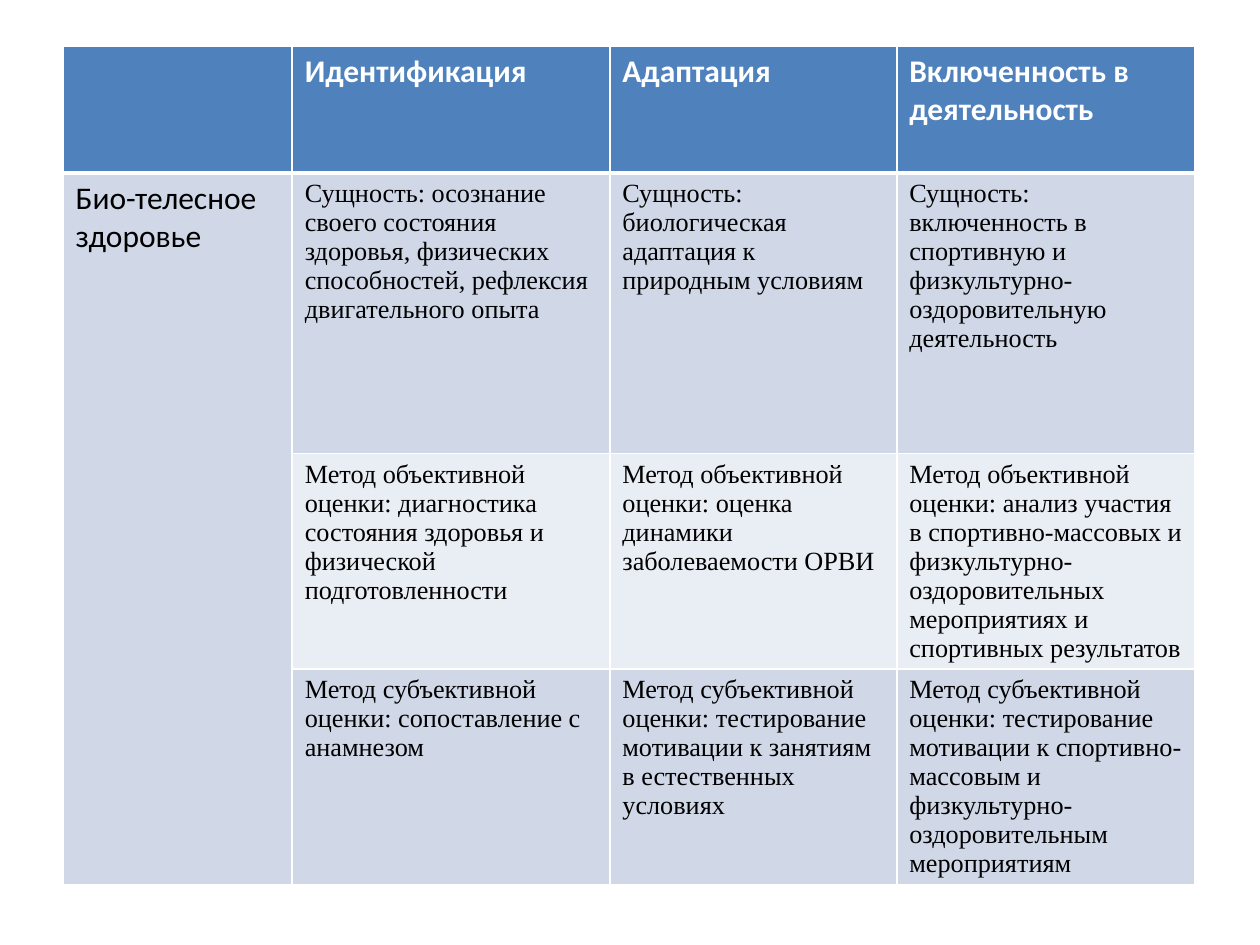
from dataclasses import dataclass

import pptx
import pptx.dml.color
import pptx.oxml.ns
import pptx.util
from lxml import etree

Pt = pptx.util.Pt


@dataclass(frozen=True)
class Theme:
    head: str = "4F81BD"
    bands: tuple = ("D0D8E8", "E9EDF4")
    light: str = "FFFFFF"
    dark: str = "000000"
    sans: str = "Calibri"
    serif: str = "Times New Roman"
    title: int = 18
    body: int = 15
    thin: int = 1
    thick: int = 3


THEME = Theme()
COLS = (131, 181.5, 164, 170.5)
ROWS = (72.5, 160.5, 123, 123)

HEADS = ("", "Идентификация", "Адаптация", "Включенность в\nдеятельность")
TOPIC = "Био-телесное\nздоровье"
BODY = (
    (
        "Сущность: осознание своего состояния здоровья, физических "
        "способностей, рефлексия двигательного опыта",
        "Сущность: биологическая адаптация к природным условиям",
        "Сущность: включенность в спортивную и "
        "физкультурно-оздоровительную деятельность",
    ),
    (
        "Метод объективной оценки: диагностика состояния здоровья и "
        "физической подготовленности",
        "Метод объективной оценки: оценка динамики заболеваемости ОРВИ",
        "Метод объективной оценки: анализ участия в спортивно-массовых и "
        "физкультурно-оздоровительных мероприятиях и спортивных результатов",
    ),
    (
        "Метод субъективной оценки: сопоставление с анамнезом",
        "Метод субъективной оценки: тестирование мотивации к занятиям "
        "в естественных условиях",
        "Метод субъективной оценки: тестирование мотивации к "
        "спортивно-массовым и физкультурно-оздоровительным мероприятиям",
    ),
)


def rgb(code):
    return pptx.dml.color.RGBColor.from_string(code)


def write(frame, text, font=THEME.serif, size=THEME.body, color=THEME.dark, bold=False):
    """Each line of the text becomes a paragraph."""
    frame.text = text
    for para in frame.paragraphs:
        style = para.font
        for run in para.runs:
            style = run.font
            style.name = font
            style.size = Pt(size)
            style.bold = bold
            style.color.rgb = rgb(color)


def edge(cell, side, width):
    qn = pptx.oxml.ns.qn
    props = cell._tc.get_or_add_tcPr()
    line = etree.SubElement(props, qn(f"a:ln{side}"), w=str(Pt(width)))
    fill = etree.SubElement(line, qn("a:solidFill"))
    etree.SubElement(fill, qn("a:srgbClr"), val=THEME.light)


def paint(cell, color, top, base):
    """Borders go in before the fill, as the schema orders them."""
    for side, width in (("L", THEME.thin), ("R", THEME.thin), ("T", top), ("B", base)):
        edge(cell, side, width)
    cell.fill.solid()
    cell.fill.fore_color.rgb = rgb(color)


def matrix(slide, left, top, cols, rows):
    frame = slide.shapes.add_table(
        len(rows), len(cols), Pt(left), Pt(top), Pt(sum(cols)), Pt(sum(rows))
    )
    grid = frame.table
    for col, width in zip(grid.columns, cols):
        col.width = Pt(width)
    for row, height in zip(grid.rows, rows):
        row.height = Pt(height)

    for i, row in enumerate(grid.rows):
        for j, cell in enumerate(row.cells):
            band = THEME.bands[0 if j == 0 else (i - 1) % 2]
            paint(
                cell,
                band if i else THEME.head,
                THEME.thick if i == 1 else THEME.thin,
                THEME.thick if i == 0 else THEME.thin,
            )

    for j, text in enumerate(HEADS):
        write(grid.cell(0, j).text_frame, text, font=THEME.sans,
              size=THEME.title, color=THEME.light, bold=True)
    grid.cell(1, 0).merge(grid.cell(len(rows) - 1, 0))
    write(grid.cell(1, 0).text_frame, TOPIC, font=THEME.sans, size=THEME.title)
    for i, line in enumerate(BODY, 1):
        for j, text in enumerate(line, 1):
            write(grid.cell(i, j).text_frame, text)


def main():
    deck = pptx.Presentation()
    deck.slide_width, deck.slide_height = Pt(720), Pt(540)
    slide = deck.slides.add_slide(deck.slide_layouts[6])
    matrix(slide, 36, 26.3, COLS, ROWS)
    deck.save("out.pptx")


if __name__ == "__main__":
    main()
